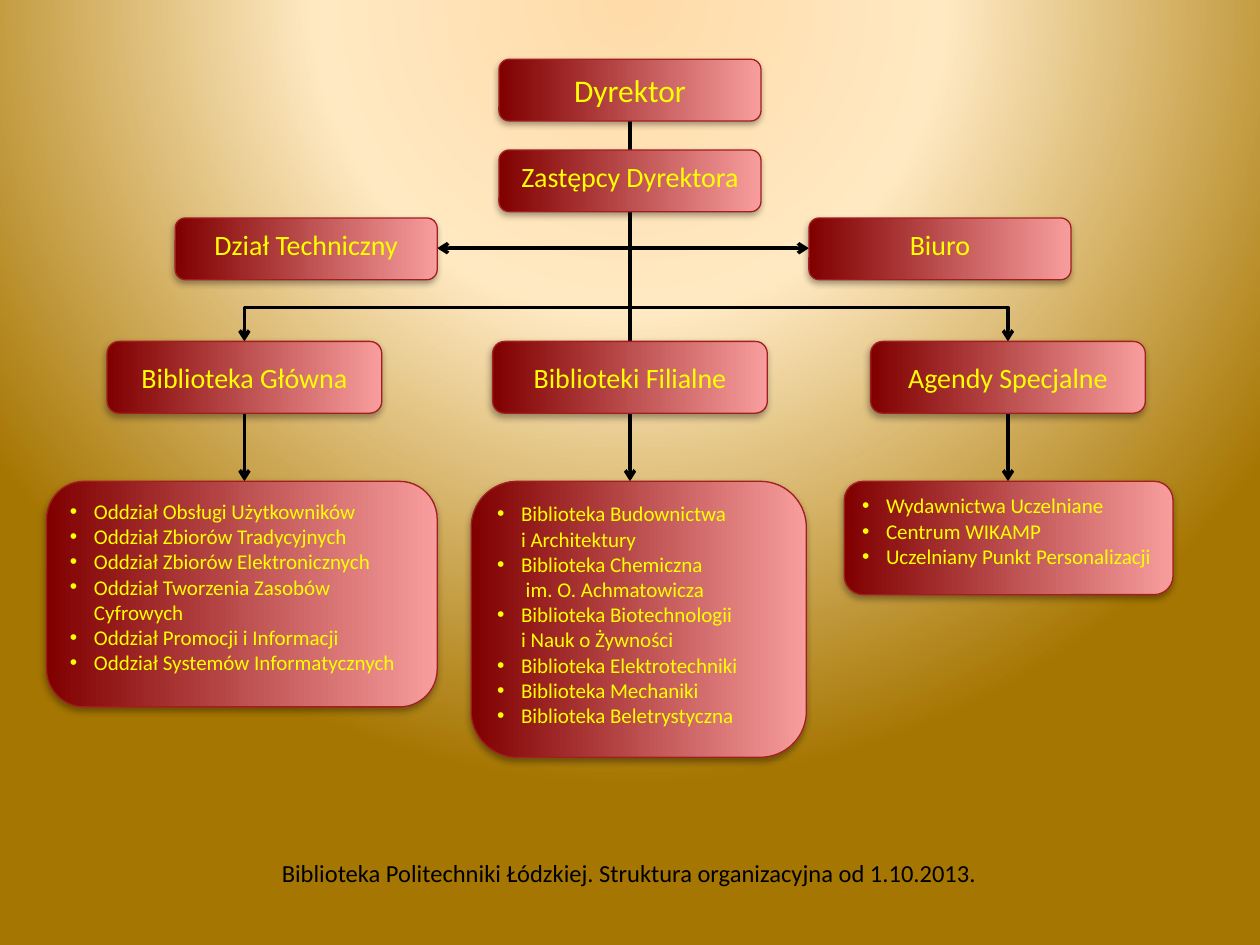
from lxml.etree import SubElement
from pptx import Presentation
from pptx.dml.color import RGBColor
from pptx.enum.shapes import MSO_CONNECTOR, MSO_SHAPE
from pptx.enum.text import MSO_ANCHOR, PP_ALIGN
from pptx.oxml import parse_xml
from pptx.oxml.ns import nsdecls, qn
from pptx.util import Inches, Pt

# Grid of 100 columns by 75 rows
COLUMN = ROW = Inches(0.1)
SLIDE_COLUMNS, SLIDE_ROWS = 100, 75

MAROON = RGBColor(0x80, 0x00, 0x00)
PINK = RGBColor(0xF8, 0x9D, 0x9D)
BORDER_RED = RGBColor(0xA3, 0x1F, 0x1F)
YELLOW = RGBColor(0xFF, 0xFF, 0x00)
BLACK = RGBColor(0x00, 0x00, 0x00)
PEACH = RGBColor(0xFF, 0xDB, 0xA9)
CREAM = RGBColor(0xFF, 0xE9, 0xC2)
OCHRE = RGBColor(0xA6, 0x76, 0x02)

FONT = "Calibri"
INDENT = Inches(0.19)

CENTER = 50
OFFICE_SIZE = (20.8, 4.9)
BRANCH_SIZE = (21.8, 5.7)
OFFICE_TOP, BRANCH_TOP, UNITS_TOP = 17.3, 27.1, 38.2
OFFICE_AXIS, FORK_ROW = 19.7, 24.4

# label, left, top, size, font size, anchor
OFFICES = [
    ("Dyrektor", 39.6, 4.7, OFFICE_SIZE, 18, MSO_ANCHOR.MIDDLE),
    ("Zastępcy Dyrektora", 39.6, 11.9, OFFICE_SIZE, 16, MSO_ANCHOR.TOP),
    ("Dział Techniczny", 13.9, OFFICE_TOP, OFFICE_SIZE, 16, MSO_ANCHOR.TOP),
    ("Biuro", 64.2, OFFICE_TOP, OFFICE_SIZE, 16, MSO_ANCHOR.TOP),
    ("Biblioteka Główna", 8.5, BRANCH_TOP, BRANCH_SIZE, 16, MSO_ANCHOR.MIDDLE),
    ("Biblioteki Filialne", 39.1, BRANCH_TOP, BRANCH_SIZE, 16, MSO_ANCHOR.MIDDLE),
    ("Agendy Specjalne", 69.1, BRANCH_TOP, BRANCH_SIZE, 16, MSO_ANCHOR.MIDDLE),
]

# left, width, height, units
UNIT_LISTS = [
    (3.7, 31, 17.9, [
        "Oddział Obsługi Użytkowników",
        "Oddział Zbiorów Tradycyjnych",
        "Oddział Zbiorów Elektronicznych",
        "Oddział Tworzenia Zasobów Cyfrowych",
        "Oddział Promocji i Informacji",
        "Oddział Systemów Informatycznych",
    ]),
    (37.4, 26.6, 21.9, [
        "Biblioteka Budownictwa \ni Architektury",
        "Biblioteka Chemiczna\n im. O. Achmatowicza",
        "Biblioteka Biotechnologii \ni Nauk o Żywności",
        "Biblioteka Elektrotechniki",
        "Biblioteka Mechaniki",
        "Biblioteka Beletrystyczna",
    ]),
    (67, 26.1, 9, [
        "Wydawnictwa Uczelniane",
        "Centrum WIKAMP",
        "Uczelniany Punkt Personalizacji",
    ]),
]


def grid(column, row):
    return int(column * COLUMN), int(row * ROW)


def paint_background(slide):
    """Radial gradient centred above the top edge of the slide."""
    stops = "".join(
        f'<a:gs pos="{share * 1000}"><a:srgbClr val="{color}"/></a:gs>'
        for share, color in ((0, PEACH), (40, CREAM), (100, OCHRE)))
    slide.background.fill.solid()
    properties = slide.background._cSld.bg.bgPr
    gradient = parse_xml(
        f'<a:gradFill {nsdecls("a")} rotWithShape="1"><a:gsLst>{stops}</a:gsLst>'
        '<a:path path="circle"><a:fillToRect l="50000" t="-80000" '
        'r="50000" b="180000"/></a:path></a:gradFill>')
    properties.replace(properties.find(qn("a:solidFill")), gradient)


def add_shadow(box):
    box.shadow.inherit = False
    effects = box._element.spPr.find(qn("a:effectLst"))
    effects.append(parse_xml(
        f'<a:outerShdw {nsdecls("a")} blurRad="{Pt(4)}" dist="{Pt(2)}" '
        f'dir="{110 * 60000}" rotWithShape="0"><a:srgbClr val="{BLACK}">'
        '<a:alpha val="35000"/></a:srgbClr></a:outerShdw>'))


def add_box(slide, left, top, size, anchor):
    box = slide.shapes.add_shape(
        MSO_SHAPE.ROUNDED_RECTANGLE, *grid(left, top), *grid(*size))
    box.fill.gradient()
    box.fill.gradient_angle = 0
    for stop, color, position in zip(box.fill.gradient_stops, (MAROON, PINK), (0, 1)):
        stop.color.rgb = color
        stop.position = position
    box.line.color.rgb = BORDER_RED
    box.line.width = Pt(0.75)
    add_shadow(box)
    box.text_frame.word_wrap = True
    box.text_frame.vertical_anchor = anchor
    return box.text_frame


def write(paragraph, text, size, color, align):
    """Fill a paragraph run by run, with a line break at each newline."""
    paragraph.alignment = align
    for number, line in enumerate(text.split("\n")):
        if number:
            paragraph.add_line_break()
        run = paragraph.add_run()
        run.text = line
        run.font.name = FONT
        run.font.size = Pt(size)
        run.font.color.rgb = color


def add_bullet(paragraph):
    properties = paragraph._p.get_or_add_pPr()
    properties.set("marL", str(INDENT))
    properties.set("indent", str(-INDENT))
    SubElement(properties, qn("a:buFont"), typeface="Arial")
    SubElement(properties, qn("a:buChar"), char="•")


def add_office(slide, label, left, top, size, font_size, anchor):
    frame = add_box(slide, left, top, size, anchor)
    write(frame.paragraphs[0], label, font_size, YELLOW, PP_ALIGN.CENTER)


def add_unit_list(slide, left, width, height, units):
    frame = add_box(slide, left, UNITS_TOP, (width, height), MSO_ANCHOR.TOP)
    for number, unit in enumerate(units):
        paragraph = frame.add_paragraph() if number else frame.paragraphs[0]
        add_bullet(paragraph)
        write(paragraph, unit, 12, YELLOW, PP_ALIGN.LEFT)


def add_arrow(slide, start, end, kind=MSO_CONNECTOR.STRAIGHT):
    arrow = slide.shapes.add_connector(kind, *grid(*start), *grid(*end))
    arrow.line.color.rgb = BLACK
    arrow.line.width = Pt(2)
    SubElement(arrow.line._get_or_add_ln(), qn("a:tailEnd"), type="arrow")
    SubElement(arrow._element.spPr, qn("a:effectLst"))
    return arrow


def add_fork_arm(slide, end):
    """One-bend arrow: across from the centre line, then down."""
    arm = add_arrow(slide, (CENTER, FORK_ROW), end, MSO_CONNECTOR.ELBOW)
    arm._element.spPr.find(qn("a:prstGeom")).set("prst", "bentConnector2")


def add_caption(slide, text):
    caption = slide.shapes.add_textbox(*grid(3.8, 67.6), *grid(92.3, 3.4))
    caption.text_frame.word_wrap = True
    write(caption.text_frame.paragraphs[0], text, 14, BLACK, PP_ALIGN.CENTER)


def main():
    presentation = Presentation()
    presentation.slide_width, presentation.slide_height = grid(SLIDE_COLUMNS, SLIDE_ROWS)
    slide = presentation.slides.add_slide(presentation.slide_layouts[6])
    paint_background(slide)

    add_arrow(slide, (CENTER, 9.4), (CENTER, UNITS_TOP))
    for office_edge in (34.7, 64.2):
        add_arrow(slide, (CENTER, OFFICE_AXIS), (office_edge, OFFICE_AXIS))
    for branch_center in (19.4, 80):
        add_fork_arm(slide, (branch_center, BRANCH_TOP))
        add_arrow(slide, (branch_center, BRANCH_TOP + BRANCH_SIZE[1]),
                  (branch_center, UNITS_TOP))

    for office in OFFICES:
        add_office(slide, *office)
    for unit_list in UNIT_LISTS:
        add_unit_list(slide, *unit_list)
    add_caption(slide, "Biblioteka Politechniki Łódzkiej. Struktura organizacyjna od 1.10.2013.")
    presentation.save("out.pptx")


if __name__ == "__main__":
    main()
